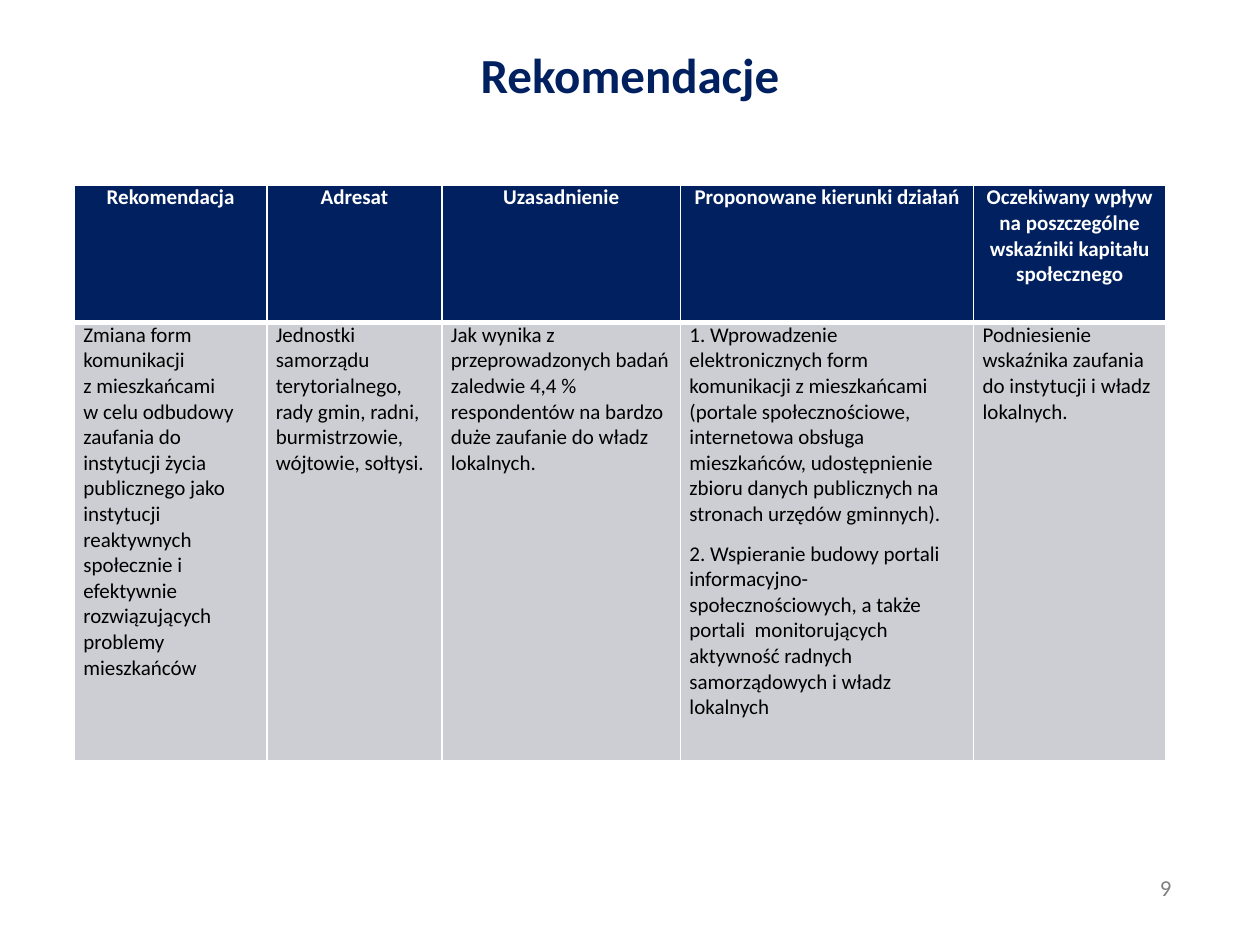
from dataclasses import dataclass

from lxml import etree
from pptx import Presentation
from pptx.dml.color import RGBColor
from pptx.enum.text import MSO_ANCHOR, PP_ALIGN
from pptx.oxml.ns import qn
from pptx.util import Cm, Pt

CENTER, LEFT = PP_ALIGN.CENTER, PP_ALIGN.LEFT
TOP = MSO_ANCHOR.TOP

NAVY = RGBColor(0x00, 0x20, 0x60)
PALE_GRAY = RGBColor(0xCC, 0xCE, 0xD3)
MID_GRAY = RGBColor(0x80, 0x80, 0x80)
WHITE = RGBColor(0xFF, 0xFF, 0xFF)
BLACK = RGBColor(0x00, 0x00, 0x00)
FONT_NAME = "Calibri"
THIN, THICK = Pt(1), Pt(3)


@dataclass(frozen=True)
class Column:
    width: float
    header: str
    body: tuple[str, ...]


@dataclass(frozen=True)
class CellStyle:
    fill: RGBColor
    color: RGBColor
    bold: bool
    alignment: PP_ALIGN
    top_border: int
    bottom_border: int


HEADER_STYLE = CellStyle(NAVY, WHITE, True, CENTER, THIN, THICK)
BODY_STYLE = CellStyle(PALE_GRAY, BLACK, False, LEFT, THICK, THIN)
ROW_HEIGHTS = (2.77, 8.84)

COLUMNS = (
    Column(3.88, "Rekomendacja", (
        "Zmiana form komunikacji \nz mieszkańcami \nw celu odbudowy zaufania do "
        "instytucji życia publicznego jako instytucji reaktywnych społecznie i "
        "efektywnie rozwiązujących problemy mieszkańców",)),
    Column(3.53, "Adresat", (
        "Jednostki samorządu terytorialnego, rady gmin, radni, burmistrzowie, "
        "wójtowie, sołtysi.",)),
    Column(4.81, "Uzasadnienie", (
        "Jak wynika z przeprowadzonych badań zaledwie 4,4 % respondentów na "
        "bardzo duże zaufanie do władz lokalnych.",)),
    Column(5.91, "Proponowane kierunki działań", (
        "1. Wprowadzenie elektronicznych form komunikacji z mieszkańcami "
        "(portale społecznościowe, internetowa obsługa mieszkańców, "
        "udostępnienie zbioru danych publicznych na stronach urzędów gminnych).",
        "2. Wspieranie budowy portali informacyjno-społecznościowych, a także "
        "portali  monitorujących aktywność radnych samorządowych i władz "
        "lokalnych")),
    Column(3.87, "Oczekiwany wpływ na poszczególne wskaźniki kapitału społecznego", (
        "Podniesienie wskaźnika zaufania do instytucji i władz lokalnych.",)),
)


def format_paragraph(paragraph, size: float, color: RGBColor, bold: bool,
                     alignment: PP_ALIGN) -> None:
    paragraph.alignment = alignment
    font = paragraph.font
    font.name, font.size, font.bold = FONT_NAME, Pt(size), bold
    font.color.rgb = color


def add_borders(cell, style: CellStyle) -> None:
    properties = cell._tc.get_or_add_tcPr()
    widths = {"a:lnL": THIN, "a:lnR": THIN,
              "a:lnT": style.top_border, "a:lnB": style.bottom_border}
    for tag, width in widths.items():
        line = etree.SubElement(properties, qn(tag), w=str(int(width)))
        fill = etree.SubElement(line, qn("a:solidFill"))
        etree.SubElement(fill, qn("a:srgbClr"), val=str(WHITE))


def fill_cell(cell, texts: tuple[str, ...], style: CellStyle) -> None:
    add_borders(cell, style)
    cell.fill.solid()
    cell.fill.fore_color.rgb = style.fill
    cell.margin_left = cell.margin_right = Cm(0.18)
    cell.margin_top = cell.margin_bottom = 0
    frame = cell.text_frame
    for index, text in enumerate(texts):
        paragraph = frame.add_paragraph() if index else frame.paragraphs[0]
        paragraph.text = text
        paragraph.space_after = Pt(8)
        format_paragraph(paragraph, 12, style.color, style.bold, style.alignment)


def add_recommendations(slide) -> None:
    width = sum(column.width for column in COLUMNS)
    table = slide.shapes.add_table(
        len(ROW_HEIGHTS), len(COLUMNS), Cm(1.5), Cm(3.73),
        Cm(width), Cm(sum(ROW_HEIGHTS))).table
    table.horz_banding = False
    for row, height in zip(table.rows, ROW_HEIGHTS):
        row.height = Cm(height)
    for index, column in enumerate(COLUMNS):
        table.columns[index].width = Cm(column.width)
        fill_cell(table.cell(0, index), (column.header,), HEADER_STYLE)
        fill_cell(table.cell(1, index), column.body, BODY_STYLE)


def set_title(slide) -> None:
    title = slide.shapes.title
    title.left, title.top, title.width, title.height = (
        Cm(1.27), Cm(0.76), Cm(22.86), Cm(2.36))
    title.text_frame.text = "Rekomendacje"
    title.text_frame.vertical_anchor = TOP
    format_paragraph(title.text_frame.paragraphs[0], 28, NAVY, True, CENTER)


def add_page_number(slide) -> None:
    box = slide.shapes.add_textbox(Cm(22.5), Cm(17.48), Cm(2), Cm(0.81))
    box.text_frame.word_wrap = True
    box.text_frame.text = "9"
    format_paragraph(box.text_frame.paragraphs[0], 13, MID_GRAY, False, CENTER)


def main() -> None:
    presentation = Presentation()
    presentation.slide_width, presentation.slide_height = Cm(25.4), Cm(19.05)
    slide = presentation.slides.add_slide(presentation.slide_layouts[5])
    add_page_number(slide)
    add_recommendations(slide)
    set_title(slide)
    presentation.save("out.pptx")


if __name__ == "__main__":
    main()
